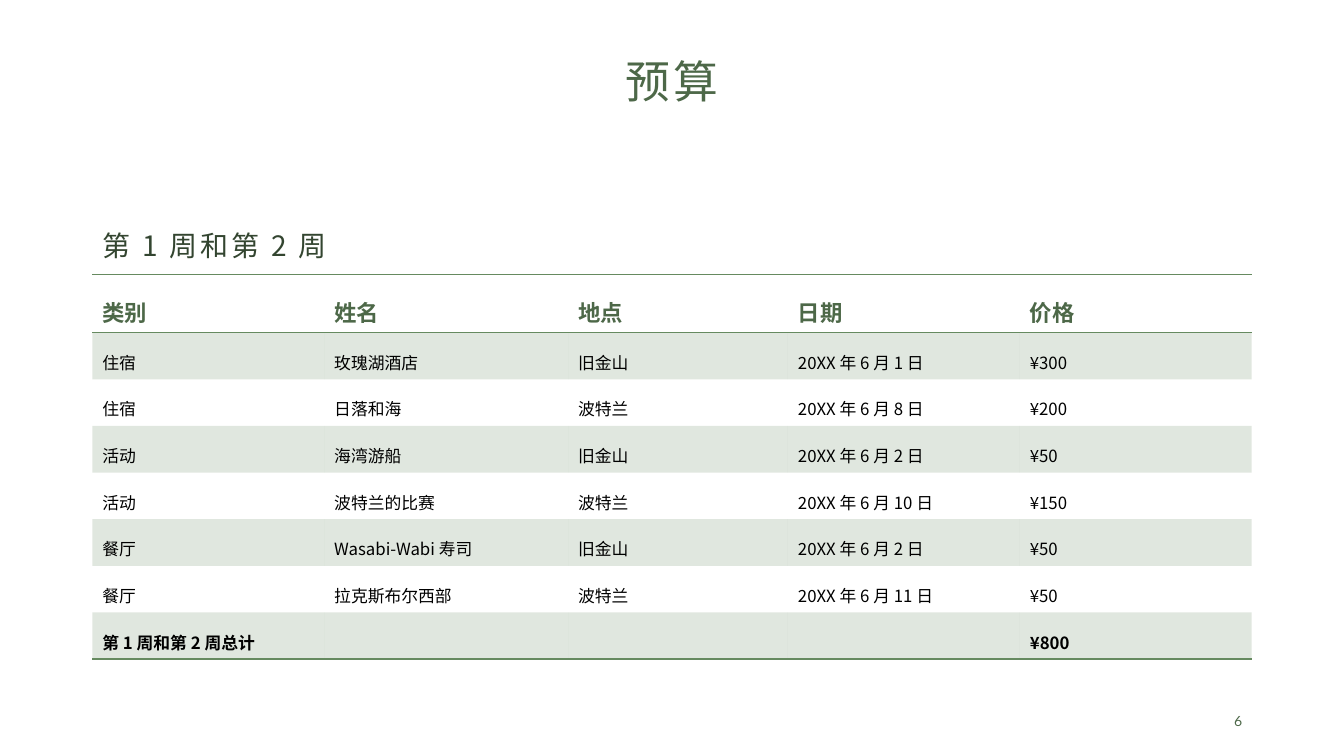
from lxml import etree
from pptx import Presentation
from pptx.dml.color import RGBColor
from pptx.enum.text import MSO_ANCHOR, PP_ALIGN
from pptx.oxml.ns import qn
from pptx.util import Inches, Pt

LEFT, CENTER, RIGHT = PP_ALIGN.LEFT, PP_ALIGN.CENTER, PP_ALIGN.RIGHT
TOP, MIDDLE = MSO_ANCHOR.TOP, MSO_ANCHOR.MIDDLE

THEME = {
    "font": "Noto Sans CJK SC",
    "latin": "Lato",
    "green": "4D6848",
    "dark": "334530",
    "line": "668A60",
    "black": "000000",
    "title": 32,
    "week": 20,
    "head": 16,
    "body": 12,
    "page": 10,
}


def write(frame, text, size, color, face="font", bold=False, gap=0, lead=1.0, align=LEFT):
    para = frame.paragraphs[0]
    para.alignment = align
    para.line_spacing = lead
    if not text:
        etree.SubElement(para._p, qn("a:endParaRPr"), sz=str(THEME[size] * 100))
        return
    run = para.add_run()
    run.text = text
    look = {"name": THEME[face], "size": Pt(THEME[size]), "bold": bold}
    for key, value in look.items():
        setattr(run.font, key, value)
    run.font.color.rgb = RGBColor.from_string(THEME[color])
    props = run._r.get_or_add_rPr()
    props.set("spc", str(gap * 100))
    east = etree.Element(qn("a:ea"), typeface=THEME[face])
    props.find(qn("a:latin")).addnext(east)


def border(cell, side):
    line = etree.SubElement(cell._tc.get_or_add_tcPr(), qn("a:" + side), w=str(Pt(1)))
    fill = etree.SubElement(line, qn("a:solidFill"))
    etree.SubElement(fill, qn("a:srgbClr"), val=THEME["line"])


deck = Presentation()
deck.slide_width, deck.slide_height = Inches(13.33), Inches(7.5)
slide = deck.slides.add_slide(deck.slide_layouts[6])
wide = 11.5
edge = (13.33 - wide) / 2

texts = [
    ((edge, 0.54, wide, 0.62), TOP, "预算",
     {"size": "title", "color": "green", "gap": 2, "lead": 0.9, "align": CENTER}),
    ((edge, 2.26, 5.54, 0.46), TOP, "第 1 周和第 2 周",
     {"size": "week", "color": "dark", "gap": 2, "lead": 0.9}),
    ((9.42, 6.95, 3, 0.4), MIDDLE, "6",
     {"size": "page", "color": "green", "face": "latin", "gap": 3, "align": RIGHT}),
]
for place, anchor, text, look in texts:
    frame = slide.shapes.add_textbox(*map(Inches, place)).text_frame
    frame.word_wrap = True
    frame.vertical_anchor = anchor
    write(frame, text, **look)

budget = [
    ("类别", "姓名", "地点", "日期", "价格"),
    ("住宿", "玫瑰湖酒店", "旧金山", "20XX 年 6 月 1 日", "¥300"),
    ("住宿", "日落和海", "波特兰", "20XX 年 6 月 8 日", "¥200"),
    ("活动", "海湾游船", "旧金山", "20XX 年 6 月 2 日", "¥50"),
    ("活动", "波特兰的比赛", "波特兰", "20XX 年 6 月 10 日", "¥150"),
    ("餐厅", "Wasabi-Wabi 寿司", "旧金山", "20XX 年 6 月 2 日", "¥50"),
    ("餐厅", "拉克斯布尔西部", "波特兰", "20XX 年 6 月 11 日", "¥50"),
    ("第 1 周和第 2 周总计", "", "", "", "¥800"),
]
widths = [2.3, 2.42, 2.18, 2.3, 2.3]
last = len(budget) - 1
top, high, rest = 2.72, 0.58, 3.24
grid = slide.shapes.add_table(
    len(budget), len(widths), Inches(edge), Inches(top), Inches(wide), Inches(high + rest)
).table
grid.first_row = grid.horz_banding = False
grid._tbl.tblPr.find(qn("a:tableStyleId")).text = "{2D5ABB26-0587-4C30-8999-92F81FD0307C}"
for column, width in zip(grid.columns, widths):
    column.width = Inches(width)

for r, row in enumerate(budget):
    head = r == 0
    grid.rows[r].height = Inches(high if head else rest / last)
    for c, text in enumerate(row):
        cell = grid.cell(r, c)
        write(cell.text_frame, text, "head" if head else "body",
              "green" if head else "black", bold=r in (0, last), lead=1.5)
        if head:
            border(cell, "lnT")
        if r in (0, last):
            border(cell, "lnB")
        if r % 2:
            cell.fill.solid()
            cell.fill.fore_color.rgb = RGBColor.from_string(THEME["line"])
            tint = cell._tc.tcPr.find(qn("a:solidFill"))[0]
            etree.SubElement(tint, qn("a:alpha"), val="20000")
        else:
            cell.fill.background()

deck.save("out.pptx")
